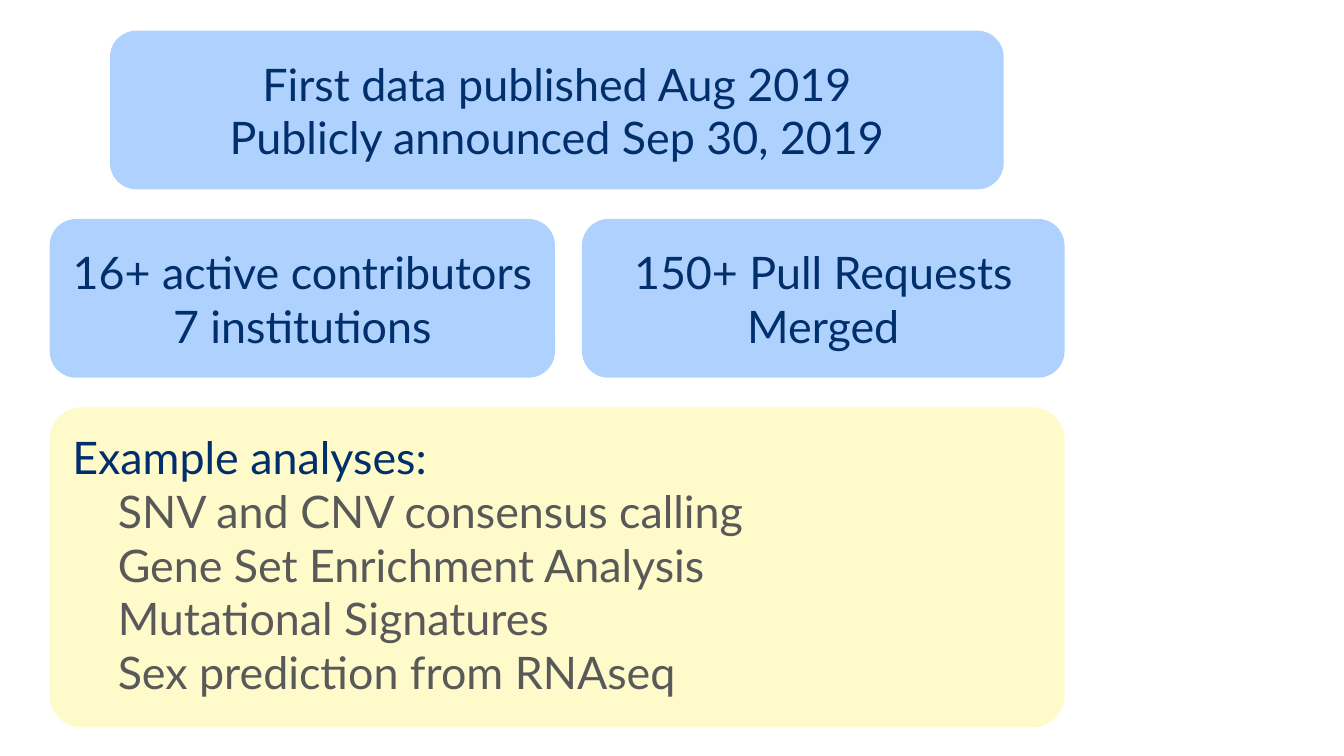
from pptx import Presentation
from pptx.dml.color import RGBColor
from pptx.enum.shapes import MSO_SHAPE
from pptx.enum.text import MSO_ANCHOR, PP_ALIGN
from pptx.util import Cm, Pt

COLORS = {
    "background": "FFFFFF",
    "fact": "AED1FE",
    "analyses": "FFFACA",
    "navy": "002F6C",
    "gray": "595959",
}
FONT = "Lato"
TEXT_SIZE = Pt(24)
INSET = Cm(0.25)

LEFT = 0.94
FULL_WIDTH = 19.18
FACT_HEIGHT = 3
TOP = 0.58
ROW_STEP = 3.56

ANALYSES = [
    "SNV and CNV consensus calling",
    "Gene Set Enrichment Analysis",
    "Mutational Signatures",
    "Sex prediction from RNAseq",
]


def rgb(name):
    return RGBColor.from_string(COLORS[name])


def add_box(slide, left, top, width, height, fill, anchor):
    box = slide.shapes.add_shape(
        MSO_SHAPE.ROUNDED_RECTANGLE, Cm(left), Cm(top), Cm(width), Cm(height))
    box.shadow.inherit = False
    box.fill.solid()
    box.fill.fore_color.rgb = rgb(fill)
    box.line.fill.background()
    frame = box.text_frame
    frame.word_wrap = True
    frame.vertical_anchor = anchor
    frame.margin_left = frame.margin_right = INSET
    frame.margin_top = frame.margin_bottom = INSET
    return box


def add_span(para, text, color):
    span = para.add_run()
    span.text = text
    span.font.name = FONT
    span.font.size = TEXT_SIZE
    span.font.color.rgb = rgb(color)


def add_lines(box, lines, color, align, indent=0):
    """Write one paragraph per line, starting in the empty first paragraph."""
    frame = box.text_frame
    for line in lines:
        first = frame.paragraphs[0]
        para = frame.add_paragraph() if first.runs else first
        para.alignment = align
        if indent:
            para._p.get_or_add_pPr().set("marL", str(Cm(indent)))
        add_span(para, line, color)


def add_fact(slide, left, row, width, lines):
    box = add_box(slide, left, TOP + row * ROW_STEP, width, FACT_HEIGHT,
                  "fact", MSO_ANCHOR.MIDDLE)
    add_lines(box, lines, "navy", PP_ALIGN.CENTER)


def add_analyses(slide):
    box = add_box(slide, LEFT, TOP + 2 * ROW_STEP, FULL_WIDTH, 6.05,
                  "analyses", MSO_ANCHOR.TOP)
    box.adjustments[0] = 0.1
    add_lines(box, ["Example analyses:"], "navy", PP_ALIGN.LEFT)
    add_lines(box, ANALYSES, "gray", PP_ALIGN.LEFT, indent=0.86)


def main():
    deck = Presentation()
    deck.slide_width = Cm(25.4)
    deck.slide_height = Cm(14.29)
    page = deck.slides.add_slide(deck.slide_layouts[6])
    page.background.fill.solid()
    page.background.fill.fore_color.rgb = rgb("background")

    add_fact(page, 2.08, 0, 16.89,
             ["First data published Aug 2019", "Publicly announced Sep 30, 2019"])
    add_fact(page, LEFT, 1, 9.55, ["16+ active contributors", "7 institutions"])
    add_fact(page, 11, 1, 9.12, ["150+ Pull Requests Merged"])
    add_analyses(page)

    deck.save("out.pptx")


if __name__ == "__main__":
    main()
